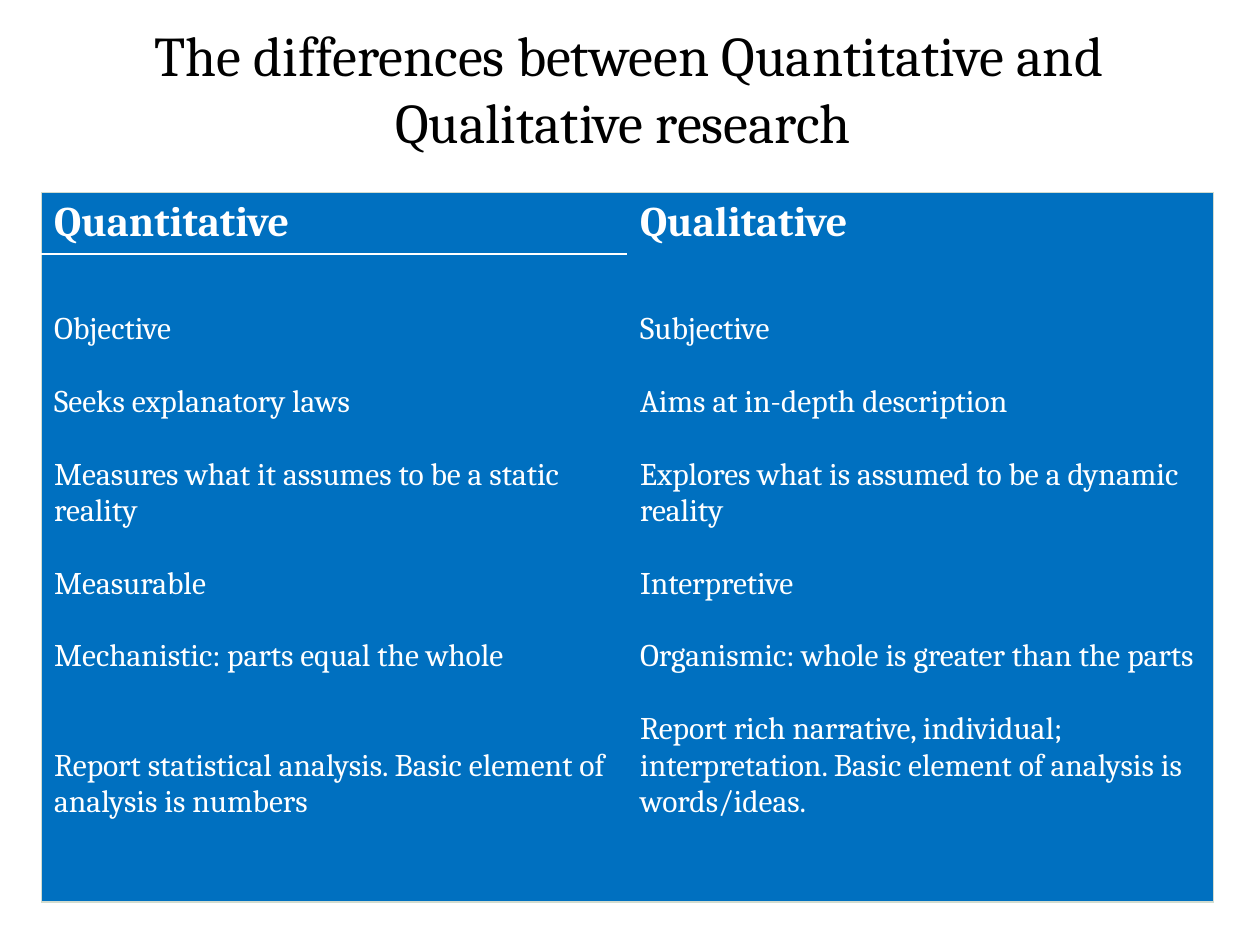
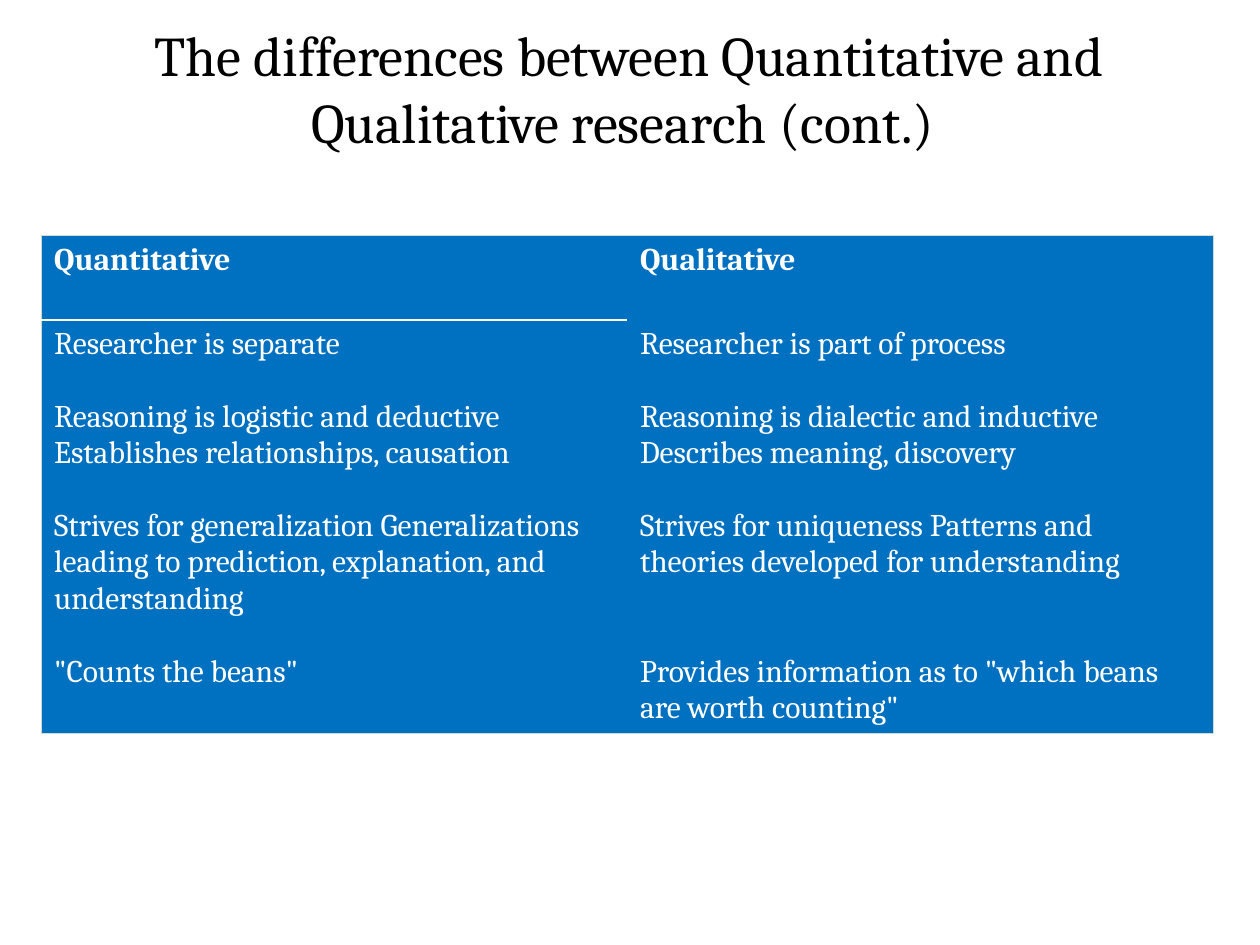
"""Build two slides of tables comparing quantitative and qualitative research."""
from lxml import etree
from pptx import Presentation
from pptx.dml.color import RGBColor
from pptx.enum import text
from pptx.oxml.ns import qn
from pptx.util import Inches, Pt

BLUE = RGBColor(0x00, 0x70, 0xC0)
WHITE = RGBColor(0xFF, 0xFF, 0xFF)
BLACK = RGBColor(0x00, 0x00, 0x00)
EDGE = RGBColor(0xD1, 0xDC, 0xD0)
FONT = "Cambria"
LINE = 20.8
TITLE = "The differences between Quantitative and Qualitative research "
HEADS = ["Quantitative", "Qualitative"]

SLIDES = [
    {
        "title": TITLE,
        "top": 1.53,
        "head_size": 24,
        "rows": [0.48, 0.4, 4.74],
        "body": [
            [(0, "Objective"),
             (1, "Seeks explanatory laws"),
             (1, "Measures what it assumes to be a static reality"),
             (1, "Measurable"),
             (1, "Mechanistic: parts equal the whole"),
             (2, "Report statistical analysis. Basic element of analysis is numbers")],
            [(0, "Subjective"),
             (1, "Aims at in-depth description"),
             (1, "Explores what is assumed to be a dynamic reality"),
             (1, "Interpretive"),
             (1, "Organismic: whole is greater than the parts"),
             (1, "Report rich narrative, individual; interpretation. "
                 "Basic element of analysis is words/ideas.")],
        ],
    },
    {
        "title": TITLE + "(cont.) ",
        "top": 1.87,
        "head_size": 18,
        "rows": [0.67, 3.28],
        "body": [
            [(0, "Researcher is separate"),
             (1, "Reasoning is logistic and deductive"),
             (0, "Establishes relationships, causation"),
             (1, "Strives for generalization Generalizations leading to "
                 "prediction, explanation, and understanding"),
             (1, '"Counts the beans"')],
            [(0, "Researcher is part of process"),
             (1, "Reasoning is dialectic and inductive"),
             (0, "Describes meaning, discovery"),
             (1, "Strives for uniqueness Patterns and theories developed "
                 "for understanding"),
             (2, 'Provides information as to "which beans are worth counting"')],
        ],
    },
]


def add_run(p, words, size, color, bold=False):
    r = p.add_run()
    r.text = words
    r.font.name, r.font.size, r.font.bold = FONT, Pt(size), bold
    r.font.color.rgb = color


def add_border(cell, side, color, width):
    ln = etree.SubElement(cell._tc.get_or_add_tcPr(), qn(f"a:ln{side}"), w=str(Pt(width)))
    if color is None:
        etree.SubElement(ln, qn("a:noFill"))
    else:
        fill = etree.SubElement(ln, qn("a:solidFill"))
        etree.SubElement(fill, qn("a:srgbClr"), val=str(color))


prs = Presentation()
prs.slide_width, prs.slide_height = Inches(10), Inches(7.5)

for data in SLIDES:
    s = prs.slides.add_slide(prs.slide_layouts[5])
    sp = s.shapes.title
    sp.left, sp.top, sp.width, sp.height = map(Inches, (0.33, 0.45, 9.33, 0.83))
    tf = sp.text_frame
    tf.word_wrap = True
    tf.auto_size = text.MSO_AUTO_SIZE.NONE
    tf.vertical_anchor = text.MSO_ANCHOR.BOTTOM
    p = tf.paragraphs[0]
    p.alignment = text.PP_ALIGN.CENTER
    add_run(p, data["title"], 32, BLACK)

    rows = data["rows"]
    last = len(rows) - 1
    tbl = s.shapes.add_table(len(rows), 2, Inches(0.33), Inches(data["top"]),
                             Inches(9.3), Inches(sum(rows))).table
    for i, height in enumerate(rows):
        tbl.rows[i].height = Inches(height)
        for j in range(2):
            tbl.columns[j].width = Inches(4.65)
            cell = tbl.cell(i, j)
            rule = WHITE if j == 0 else None
            sides = {
                "L": EDGE if j == 0 else None,
                "R": EDGE if j == 1 else None,
                "T": EDGE if i == 0 else rule if i == 1 else None,
                "B": EDGE if i == last else rule if i == 0 else None,
            }
            for side, color in sides.items():
                add_border(cell, side, color, 1.57 if color == WHITE else 0.75)
            cell.fill.solid()
            cell.fill.fore_color.rgb = BLUE
            tf = cell.text_frame
            if i == 0:
                add_run(tf.paragraphs[0], HEADS[j], data["head_size"], WHITE, True)
            elif i == last:
                for n, (gap, words) in enumerate(data["body"][j]):
                    p = tf.add_paragraph() if n else tf.paragraphs[0]
                    p.space_before = Pt(gap * LINE)
                    add_run(p, words, 18, WHITE)

prs.save("out.pptx")
